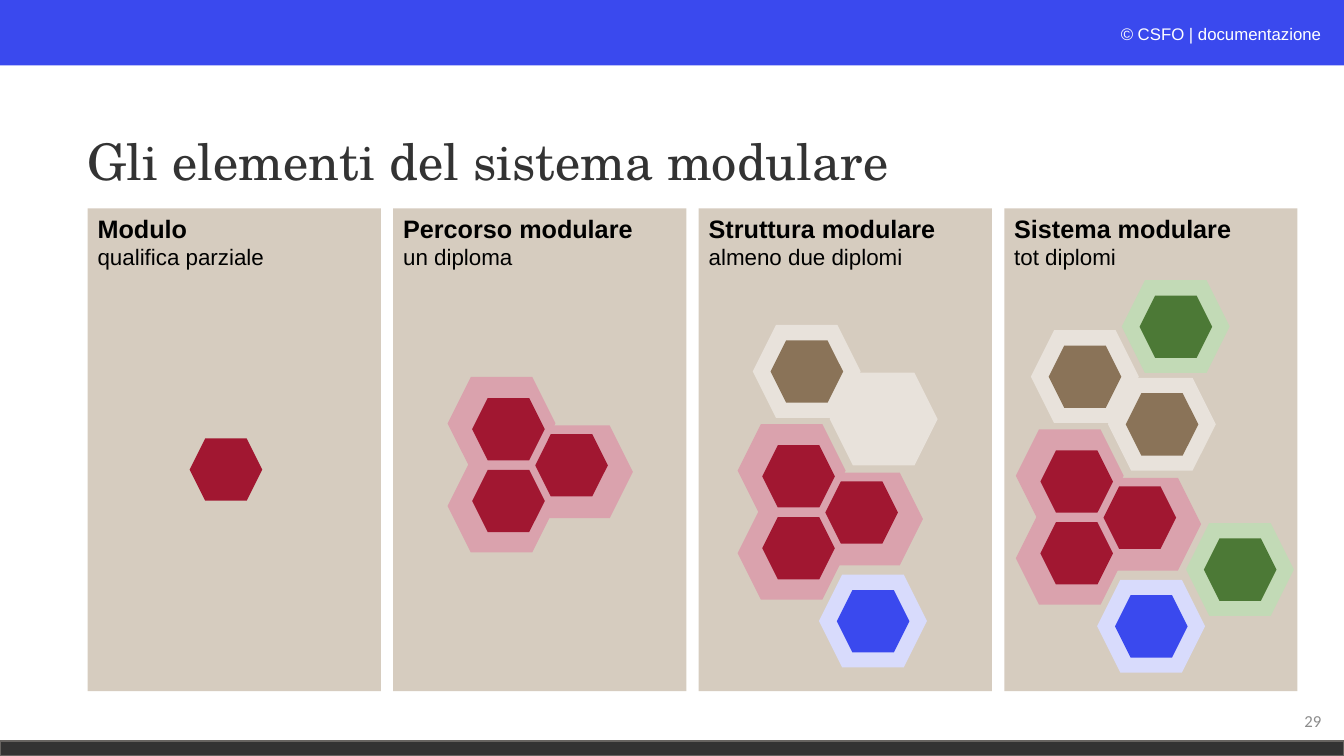
from dataclasses import dataclass

from pptx import Presentation
from pptx import util as u
from pptx.dml.color import RGBColor
from pptx.enum import shapes, text

RED, BROWN, BLUE, GREEN = "A11731", "8A7358", "3A49EE", "4C7936"
HALO = {RED: "DAA2AD", BROWN: "E8E2DB", BLUE: "D8DBFC", GREEN: "C2DAB6"}
OUTER, INNER = (2.72, 2.34), (1.83, 1.57)
INSET = (0.45, 0.39)


@dataclass
class Panel:
    title: str
    subtitle: str


@dataclass
class Module:
    """A hexagon with a halo, placed relative to the red path."""
    dx: float
    dy: float
    color: str


@dataclass
class Label:
    left: float
    top: float
    width: float
    height: float
    runs: list[tuple[str, str, bool]]  # wording, colour, italic
    font: str
    size: int
    align: text.PP_ALIGN = text.PP_ALIGN.LEFT
    anchor: text.MSO_ANCHOR = text.MSO_ANCHOR.MIDDLE


PANELS = [
    Panel("Modulo", "qualifica parziale"),
    Panel("Percorso modulare", "un diploma"),
    Panel("Struttura modulare", "almeno due diplomi"),
    Panel("Sistema modulare", "tot diplomi"),
]
PATH_OUTER = [(0, 2.08), (1.95, 1.22), (0, 0)]
PATH_INNER = [(0.62, 2.34), (0.62, 0.53), (2.21, 1.44)]
STRUCTURE = [Module(0.38, -2.5, BROWN), Module(2.05, 3.79, BLUE)]
SYSTEM = STRUCTURE + [Module(4.29, 2.36, GREEN), Module(2.67, -3.76, GREEN)]
SPARE_HALO = (2.32, -1.3)


def rgb(value: str) -> RGBColor:
    return RGBColor.from_string(value)


def add_filled(slide, kind, left: float, top: float, width: float,
               height: float, color: str):
    shape = slide.shapes.add_shape(
        kind, u.Cm(left), u.Cm(top), u.Cm(width), u.Cm(height))
    shape.shadow.inherit = False
    shape.fill.solid()
    shape.fill.fore_color.rgb = rgb(color)
    shape.line.fill.background()
    return shape


def style_run(run, font: str, size: int, color: str,
              bold: bool = False, italic: bool = False) -> None:
    run.font.name = font
    run.font.size = u.Pt(size)
    run.font.bold = bold
    run.font.italic = italic
    run.font.color.rgb = rgb(color)


def add_label(slide, label: Label):
    box = slide.shapes.add_textbox(u.Cm(label.left), u.Cm(label.top),
                                   u.Cm(label.width), u.Cm(label.height))
    frame = box.text_frame
    frame.word_wrap = True
    frame.vertical_anchor = label.anchor
    paragraph = frame.paragraphs[0]
    paragraph.alignment = label.align
    for wording, color, italic in label.runs:
        run = paragraph.add_run()
        run.text = wording
        style_run(run, label.font, label.size, color, italic=italic)
    return paragraph


def add_panel(slide, index: int, panel: Panel) -> None:
    shape = add_filled(slide, shapes.MSO_SHAPE.RECTANGLE,
                       2.21 + index * 7.7, 5.25, 7.39, 12.17, "D6CCBF")
    frame = shape.text_frame
    frame.word_wrap = True
    frame.vertical_anchor = text.MSO_ANCHOR.TOP
    frame.text = f"{panel.title}\n{panel.subtitle}"
    for paragraph, size, bold in zip(frame.paragraphs, (18, 16), (True, False)):
        paragraph.alignment = text.PP_ALIGN.LEFT
        style_run(paragraph.runs[0], "Arial", size, "000000", bold)


def add_hexagon(slide, left: float, top: float, size: tuple[float, float],
                color: str) -> None:
    add_filled(slide, shapes.MSO_SHAPE.HEXAGON, left, top, *size, color)


def add_path(slide, left: float, top: float) -> None:
    for dx, dy in PATH_OUTER:
        add_hexagon(slide, left + dx, top + dy, OUTER, HALO[RED])
    for dx, dy in PATH_INNER:
        add_hexagon(slide, left + dx, top + dy, INNER, RED)


def add_core(slide, left: float, top: float, color: str) -> None:
    add_hexagon(slide, left + INSET[0], top + INSET[1], INNER, color)


def add_structure(slide, left: float, top: float,
                  modules: list[Module]) -> None:
    add_path(slide, left, top)
    add_hexagon(slide, left + SPARE_HALO[0], top + SPARE_HALO[1],
                OUTER, HALO[BROWN])
    for module in modules:
        x, y = left + module.dx, top + module.dy
        add_hexagon(slide, x, y, OUTER, HALO[module.color])
        add_core(slide, x, y, module.color)


def main() -> None:
    presentation = Presentation()
    presentation.slide_width = u.Cm(33.87)
    presentation.slide_height = u.Cm(19.05)
    slide = presentation.slides.add_slide(presentation.slide_layouts[6])

    # Header and footer bands
    rectangle = shapes.MSO_SHAPE.RECTANGLE
    add_filled(slide, rectangle, 0, 0, 33.87, 1.65, BLUE)
    footer = add_filled(slide, rectangle, 0, 18.67, 33.87, 0.38, "333333")
    footer.line.color.rgb = rgb("666360")
    footer.line.width = u.Pt(1)

    # Copyright, page number and title
    right = text.PP_ALIGN.RIGHT
    add_label(slide, Label(
        21.89, 0.48, 11.66, 0.76,
        [("© ", "FCFDFE", True), ("CSFO | documentazione", "FFFFFF", False)],
        "Arial", 12, right, text.MSO_ANCHOR.TOP))
    add_label(slide, Label(25.93, 17.65, 7.62, 1.02,
                           [("29", "8C8C8C", False)], "Calibri", 12, right))
    title = add_label(slide, Label(
        1.96, 2.31, 22.4, 3.68,
        [("Gli elementi del sistema modulare", "333333", False)],
        "TeX Gyre Schola", 36))
    title.line_spacing = 0.9

    # Four panels
    for index, panel in enumerate(PANELS):
        add_panel(slide, index, panel)

    # Module, path, structure and system
    add_hexagon(slide, 4.78, 11.05, INNER, RED)
    add_path(slide, 11.28, 9.5)
    add_structure(slide, 18.59, 10.69, STRUCTURE)
    system_left, system_top = 25.6, 10.82
    add_structure(slide, system_left, system_top, SYSTEM)
    add_core(slide, system_left + SPARE_HALO[0],
             system_top + SPARE_HALO[1], BROWN)

    presentation.save("out.pptx")


if __name__ == "__main__":
    main()
